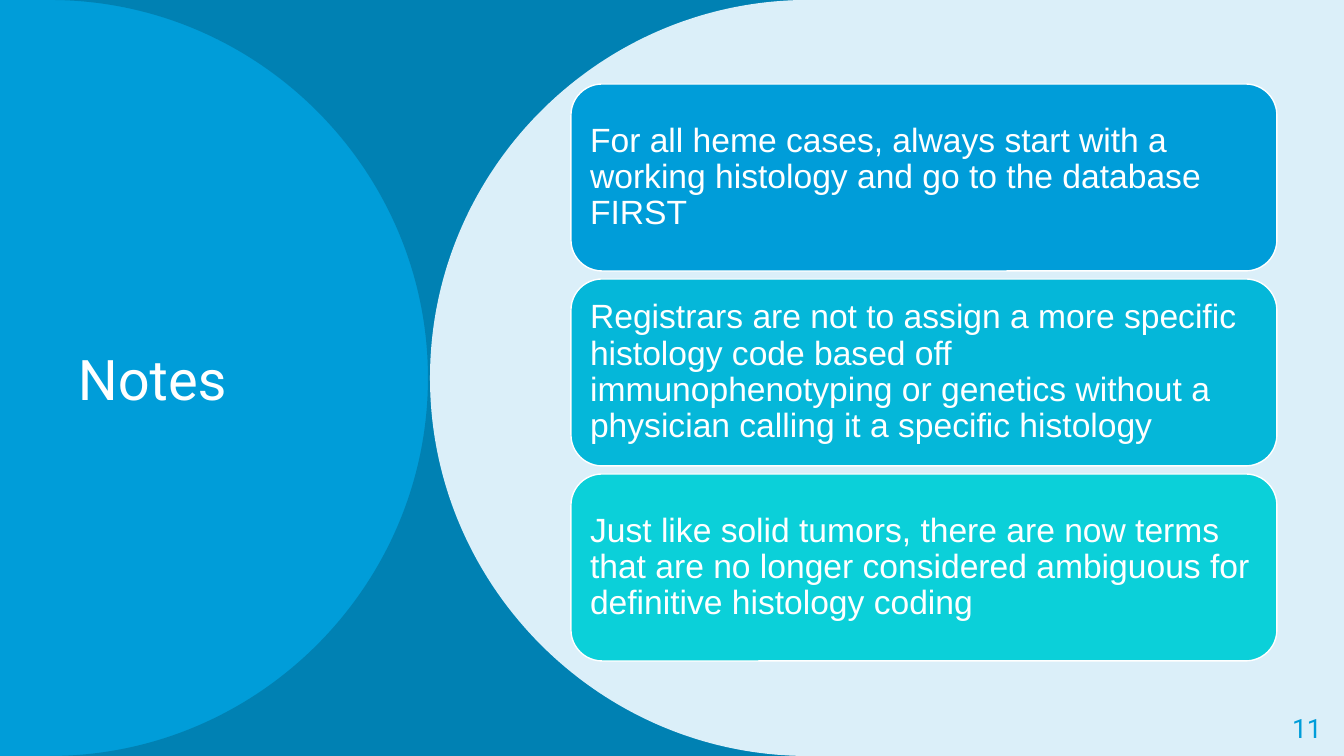
from lxml.etree import SubElement
from pptx import Presentation
from pptx.dml.color import RGBColor
from pptx.enum.shapes import MSO_SHAPE
from pptx.enum.text import MSO_ANCHOR, PP_ALIGN
from pptx.oxml.ns import qn
from pptx.util import Pt

PX = 914400 / 100.8
WIDTH, HEIGHT = 1344, 756
RADIUS = HEIGHT / 2
HANDLE = RADIUS * 0.55

COLORS = {
    "pale": "DBEFF9",
    "blue": "009DD9",
    "deep": "0076A3",
    "cyan": "05B7D9",
    "turquoise": "0BD0D9",
    "white": "FFFFFF",
}

NOTES = [
    ("blue", "For all heme cases, always start with a working histology "
             "and go to the database FIRST"),
    ("cyan", "Registrars are not to assign a more specific histology code based off "
             "immunophenotyping or genetics without a physician calling it "
             "a specific histology"),
    ("turquoise", "Just like solid tumors, there are now terms that are no longer "
                  "considered ambiguous for definitive histology coding"),
]


def px(length):
    return round(length * PX)


def color(name):
    return RGBColor.from_string(COLORS[name])


def paint(fill, name, opacity=100):
    fill.solid()
    fill.fore_color.rgb = color(name)
    if opacity < 100:
        tint = fill._xPr.find(qn("a:solidFill"))[0]
        SubElement(tint, qn("a:alpha"), val=str(opacity * 1000))


def write(frame, text, *, size, font, ink, align=PP_ALIGN.LEFT, spacing=0.9):
    frame.word_wrap = True
    frame.vertical_anchor = MSO_ANCHOR.MIDDLE
    frame.margin_left = frame.margin_right = px(10)
    frame.margin_top = frame.margin_bottom = px(5)
    paragraph = frame.paragraphs[0]
    paragraph.alignment = align
    paragraph.line_spacing = spacing
    run = paragraph.add_run()
    run.text = text
    run.font.size = Pt(size)
    run.font.name = font
    run.font.color.rgb = color(ink)


def add_label(slide, left, top, width, height, text, **text_format):
    label = slide.shapes.add_textbox(px(left), px(top), px(width), px(height))
    write(label.text_frame, text, **text_format)


def bend(panel):
    lines = list(panel._element.iter(qn("a:lnTo")))
    for corner in (lines[1:4], lines[4:7]):
        curve = corner[0].makeelement(qn("a:cubicBezTo"))
        corner[0].addprevious(curve)
        for line in corner:
            curve.append(line[0])
            line.getparent().remove(line)


def add_round_panel(slide, side, center, bulge, name, opacity=100):
    crest = center + bulge * RADIUS
    lean = center + bulge * HANDLE
    corners = [
        (center, 0),
        (lean, 0), (crest, RADIUS - HANDLE), (crest, RADIUS),
        (crest, RADIUS + HANDLE), (lean, HEIGHT), (center, HEIGHT),
        (side, HEIGHT),
    ]
    outline = slide.shapes.build_freeform(px(side), 0)
    outline.add_line_segments([(px(x), px(y)) for x, y in corners], close=True)
    panel = outline.convert_to_shape()
    bend(panel)
    panel.shadow.inherit = False
    paint(panel.fill, name, opacity)
    panel.line.fill.background()


def add_note_card(slide, left, top, width, height, name, text):
    card = slide.shapes.add_shape(
        MSO_SHAPE.ROUNDED_RECTANGLE, px(left), px(top), px(width), px(height))
    card.shadow.inherit = False
    paint(card.fill, name)
    card.line.color.rgb = color("white")
    card.line.width = Pt(1)
    write(card.text_frame, text, size=24, font="Arial", ink="white")


def main():
    deck = Presentation()
    deck.slide_width, deck.slide_height = px(WIDTH), px(HEIGHT)
    slide = deck.slides.add_slide(deck.slide_layouts[6])
    paint(slide.background.fill, "pale")

    add_round_panel(slide, 0, 810, -1, "blue")
    add_round_panel(slide, 861, 50, 1, "deep", opacity=70)
    add_label(slide, 68, 76, 329, 605, "Notes",
              size=40, font="Roboto", ink="white", spacing=1.0)
    add_round_panel(slide, 1087, 808, -1, "pale")
    add_label(slide, 1255, 710, 77, 40, "11",
              size=19, font="Roboto", ink="blue", align=PP_ALIGN.RIGHT)

    for row, (name, text) in enumerate(NOTES):
        add_note_card(slide, 571, 84 + row * 195, 706, 187, name, text)

    deck.save("out.pptx")


if __name__ == "__main__":
    main()
